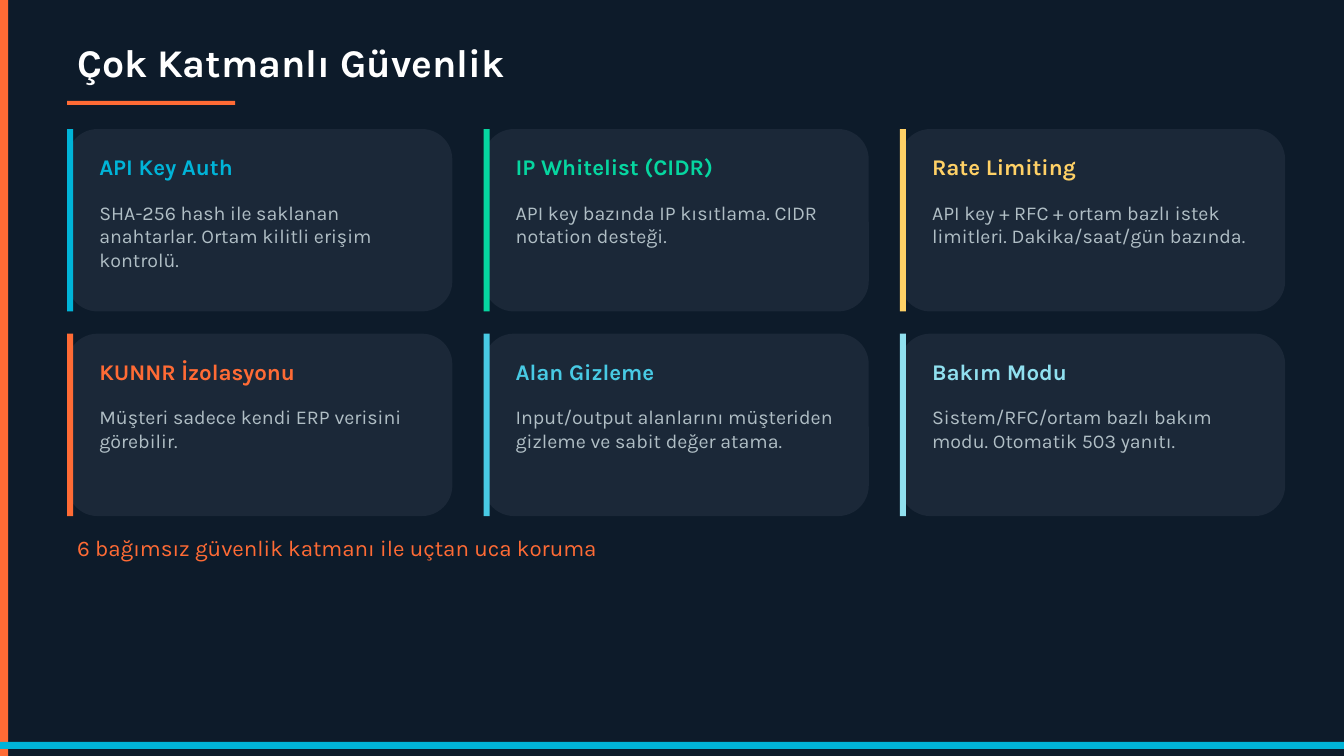
from dataclasses import dataclass

from pptx import Presentation
from pptx.dml.color import RGBColor
from pptx.enum.shapes import MSO_SHAPE
from pptx.enum.text import MSO_ANCHOR, MSO_AUTO_SIZE, PP_ALIGN
from pptx.util import Inches, Pt


@dataclass(frozen=True)
class Theme:
    """Colours, font and type sizes of the slide."""

    font: str = "Karla"
    night: str = "0D1B2A"
    card: str = "1B2838"
    white: str = "FFFFFF"
    muted: str = "B0BEC5"
    orange: str = "FF6B35"
    blue: str = "00B4D8"
    green: str = "06D6A0"
    yellow: str = "FFD166"
    sky: str = "48CAE4"
    ice: str = "90E0EF"
    title_size: int = 28
    heading_size: int = 16
    body_size: int = 14


THEME = Theme()
WIDTH, HEIGHT = 13.33, 7.5
MARGIN = WIDTH * 0.05
CONTENT_WIDTH = 12.08
COLUMNS = 3
CARD_WIDTH, CARD_HEIGHT = 3.82, 1.81
COLUMN_STEP = (CONTENT_WIDTH - CARD_WIDTH) / (COLUMNS - 1)
ROW_STEP = 2.03
CARDS_TOP = 1.28
STRIPE_WIDTH = 0.06
CARD_PADDING = 0.22

LAYERS = [
    ("API Key Auth", THEME.blue,
     "SHA-256 hash ile saklanan anahtarlar. Ortam kilitli erişim kontrolü."),
    ("IP Whitelist (CIDR)", THEME.green,
     "API key bazında IP kısıtlama. CIDR notation desteği."),
    ("Rate Limiting", THEME.yellow,
     "API key + RFC + ortam bazlı istek limitleri. Dakika/saat/gün bazında."),
    ("KUNNR İzolasyonu", THEME.orange,
     "Müşteri sadece kendi ERP verisini görebilir."),
    ("Alan Gizleme", THEME.sky,
     "Input/output alanlarını müşteriden gizleme ve sabit değer atama."),
    ("Bakım Modu", THEME.ice,
     "Sistem/RFC/ortam bazlı bakım modu. Otomatik 503 yanıtı."),
]


def add_block(slide, left, top, width, height, color, kind=MSO_SHAPE.RECTANGLE):
    """Add a flat filled shape without outline or shadow."""
    block = slide.shapes.add_shape(
        kind, Inches(left), Inches(top), Inches(width), Inches(height))
    block.shadow.inherit = False
    block.fill.solid()
    block.fill.fore_color.rgb = RGBColor.from_string(color)
    block.line.fill.background()


def write(holder, text, size, color, bold=False):
    """Put formatted, left-aligned text into a text box or placeholder."""
    frame = holder.text_frame
    frame.word_wrap = True
    frame.auto_size = MSO_AUTO_SIZE.SHAPE_TO_FIT_TEXT
    frame.vertical_anchor = MSO_ANCHOR.TOP
    frame.text = text
    paragraph = frame.paragraphs[0]
    paragraph.alignment = PP_ALIGN.LEFT
    font = paragraph.runs[0].font
    font.name, font.size, font.bold = THEME.font, Pt(size), bold
    font.color.rgb = RGBColor.from_string(color)


def add_text(slide, left, top, width, height, text, **style):
    """Add a text box with formatted text."""
    label = slide.shapes.add_textbox(
        Inches(left), Inches(top), Inches(width), Inches(height))
    write(label, text, **style)


def add_title(slide, text):
    """Place the title placeholder and its underline."""
    title = slide.shapes.title
    title.left, title.top = Inches(MARGIN), Inches(0.33)
    title.width, title.height = Inches(CONTENT_WIDTH), Inches(0.58)
    write(title, text, size=THEME.title_size, color=THEME.white, bold=True)
    add_block(slide, MARGIN, 1, WIDTH / 8, 0.04, THEME.orange)


def add_card(slide, position, heading, accent, description):
    """Add one security layer card at its grid position."""
    row, column = divmod(position, COLUMNS)
    left = MARGIN + column * COLUMN_STEP
    top = CARDS_TOP + row * ROW_STEP
    text_left = left + CARD_PADDING
    text_width = 3.43
    add_block(slide, left, top, CARD_WIDTH, CARD_HEIGHT, THEME.card,
              MSO_SHAPE.ROUNDED_RECTANGLE)
    add_block(slide, left, top, STRIPE_WIDTH, CARD_HEIGHT, accent)
    add_text(slide, text_left, top + 0.19, text_width, 0.36, heading,
             size=THEME.heading_size, color=accent, bold=True)
    add_text(slide, text_left, top + 0.66, text_width, 0.97, description,
             size=THEME.body_size, color=THEME.muted)


def main():
    """Build the slide and save it."""
    deck = Presentation()
    deck.slide_width, deck.slide_height = Inches(WIDTH), Inches(HEIGHT)
    slide = deck.slides.add_slide(deck.slide_layouts[5])
    slide.background.fill.solid()
    slide.background.fill.fore_color.rgb = RGBColor.from_string(THEME.night)

    add_block(slide, 0, 0, 0.08, HEIGHT, THEME.orange)
    add_title(slide, "Çok Katmanlı Güvenlik")
    for position, layer in enumerate(LAYERS):
        add_card(slide, position, *layer)
    add_text(slide, MARGIN, HEIGHT * 0.7, CONTENT_WIDTH, 0.42,
             "6 bağımsız güvenlik katmanı ile uçtan uca koruma",
             size=THEME.heading_size, color=THEME.orange)
    add_block(slide, 0, 7.36, WIDTH, 0.07, THEME.blue)
    deck.save("out.pptx")


if __name__ == "__main__":
    main()
